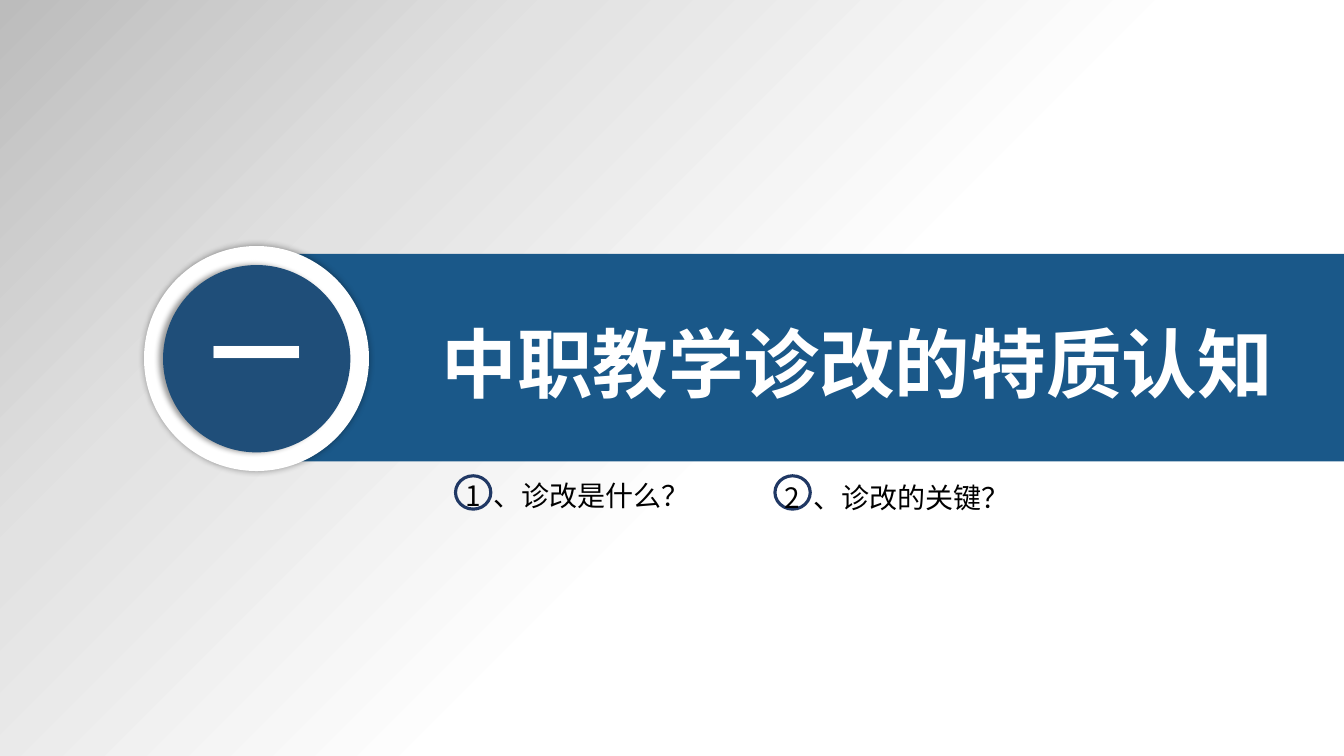
from lxml.etree import SubElement
from pptx import Presentation
from pptx.dml.color import RGBColor
from pptx.enum.shapes import MSO_SHAPE
from pptx.enum.text import MSO_ANCHOR, MSO_AUTO_SIZE, PP_ALIGN
from pptx.oxml import parse_xml
from pptx.oxml.ns import nsdecls, qn
from pptx.util import Cm, Pt

FONT = "Noto Sans CJK SC"
WIDTH, HEIGHT = 33.87, 19.05


def add_shape(kind, left, top, width, height, fill=None, line=None):
    shape = slide.shapes.add_shape(kind, Cm(left), Cm(top), Cm(width), Cm(height))
    shape.shadow.inherit = False
    if fill:
        shape.fill.solid()
        shape.fill.fore_color.rgb = RGBColor.from_string(fill)
    else:
        shape.fill.background()
    if line:
        shape.line.color.rgb = RGBColor.from_string(line)
        shape.line.width = Pt(2.25)
    else:
        shape.line.fill.background()
    return shape


def write_text(shape, text, size, color, bold=False, wrap=True):
    """Put one left-aligned run in the shape and return its paragraph."""
    frame = shape.text_frame
    frame.word_wrap = wrap
    frame.auto_size = MSO_AUTO_SIZE.NONE
    frame.vertical_anchor = MSO_ANCHOR.TOP
    paragraph = frame.paragraphs[0]
    paragraph.alignment = PP_ALIGN.LEFT
    run = paragraph.add_run()
    run.text = text
    run.font.size = Pt(size)
    run.font.bold = bold
    run.font.color.rgb = RGBColor.from_string(color)
    run.font.name = FONT
    SubElement(run.font._element, qn("a:ea"), typeface=FONT)
    return paragraph


presentation = Presentation()
presentation.slide_width = Cm(WIDTH)
presentation.slide_height = Cm(HEIGHT)
slide = presentation.slides.add_slide(presentation.slide_layouts[5])
title = slide.shapes.title

# Diagonal grey backdrop
backdrop = add_shape(MSO_SHAPE.RECTANGLE, 0, 0, WIDTH, HEIGHT)
backdrop.fill.gradient()
backdrop.fill.gradient_angle = 315
stops = backdrop._element.spPr.find(qn("a:gradFill")).find(qn("a:gsLst"))
for stop in list(stops):
    stops.remove(stop)
for percent, color in [(0, "BCBCBC"), (27, "E2E2E2"), (57, "FFFFFF")]:
    stop = SubElement(stops, qn("a:gs"), pos=str(percent * 1000))
    SubElement(stop, qn("a:srgbClr"), val=color)

# Section banner and title
banner = add_shape(MSO_SHAPE.RECTANGLE, 6.1, 6.4, WIDTH - 6.1, 5.23, "1A5889")
banner._element.addnext(title._element)
title.left, title.top, title.width, title.height = Cm(10.87), Cm(7.85), Cm(21.67), Cm(2.57)
write_text(title, "中职教学诊改的特质认知", 54, "FFFFFF", bold=True, wrap=False)

# Section badge: left, top, diameter, fill, shadow blur, distance and angle
badge_rings = [
    (3.63, 6.2, 5.67, "FFFFFF", 5, 0, 0),
    (4.11, 6.68, 4.72, "1F4E79", 4, 3, 180),
]
for left, top, diameter, fill, blur, distance, angle in badge_rings:
    ring = add_shape(MSO_SHAPE.OVAL, left, top, diameter, diameter, fill)
    effects = ring._element.spPr.find(qn("a:effectLst"))
    effects.append(parse_xml(
        f'<a:outerShdw {nsdecls("a")} blurRad="{Pt(blur)}" dist="{Pt(distance)}" '
        f'dir="{angle * 60000}" algn="ctr" rotWithShape="0">'
        '<a:srgbClr val="000000"><a:alpha val="40000"/></a:srgbClr></a:outerShdw>'))
number = slide.shapes.add_textbox(Cm(5.05), Cm(7.34), Cm(4.09), Cm(3.07))
write_text(number, "一", 66, "FFFFFF", bold=True)

# Numbered questions
questions = [(11.48, 11.68, "1\t、诊改是什么？"), (19.53, 11.73, "2\t、诊改的关键？")]
for left, top, text in questions:
    add_shape(MSO_SHAPE.OVAL, left, 11.99, 0.89, 0.84, line="203864")
    question = slide.shapes.add_textbox(Cm(left), Cm(top), Cm(5.69), Cm(1.32))
    paragraph = write_text(question, text, 20, "000000")
    paragraph.line_spacing = 1.3
    tabs = SubElement(paragraph._element.get_or_add_pPr(), qn("a:tabLst"))
    SubElement(tabs, qn("a:tab"), pos=str(Cm(0.71)), algn="l")

presentation.save("out.pptx")
